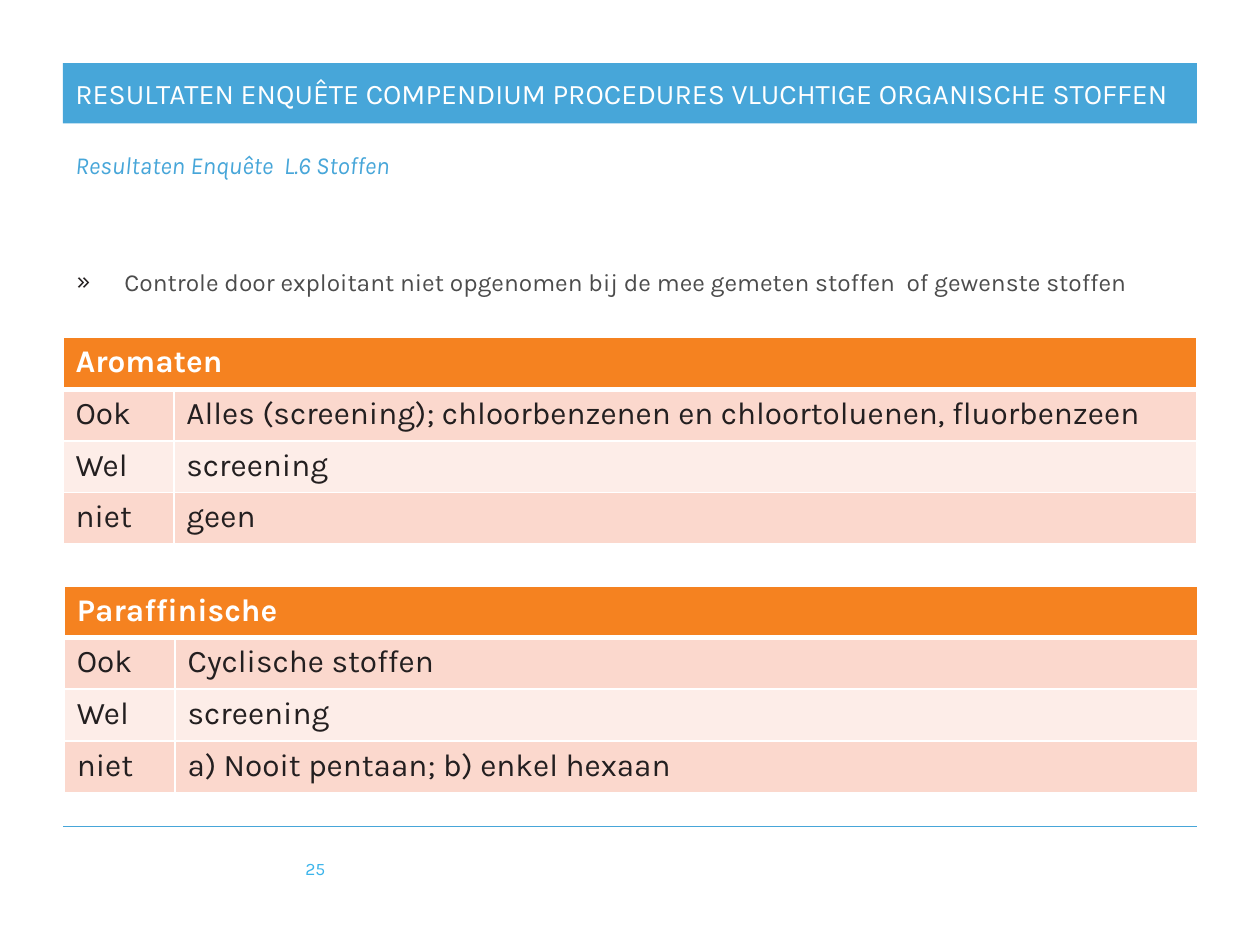
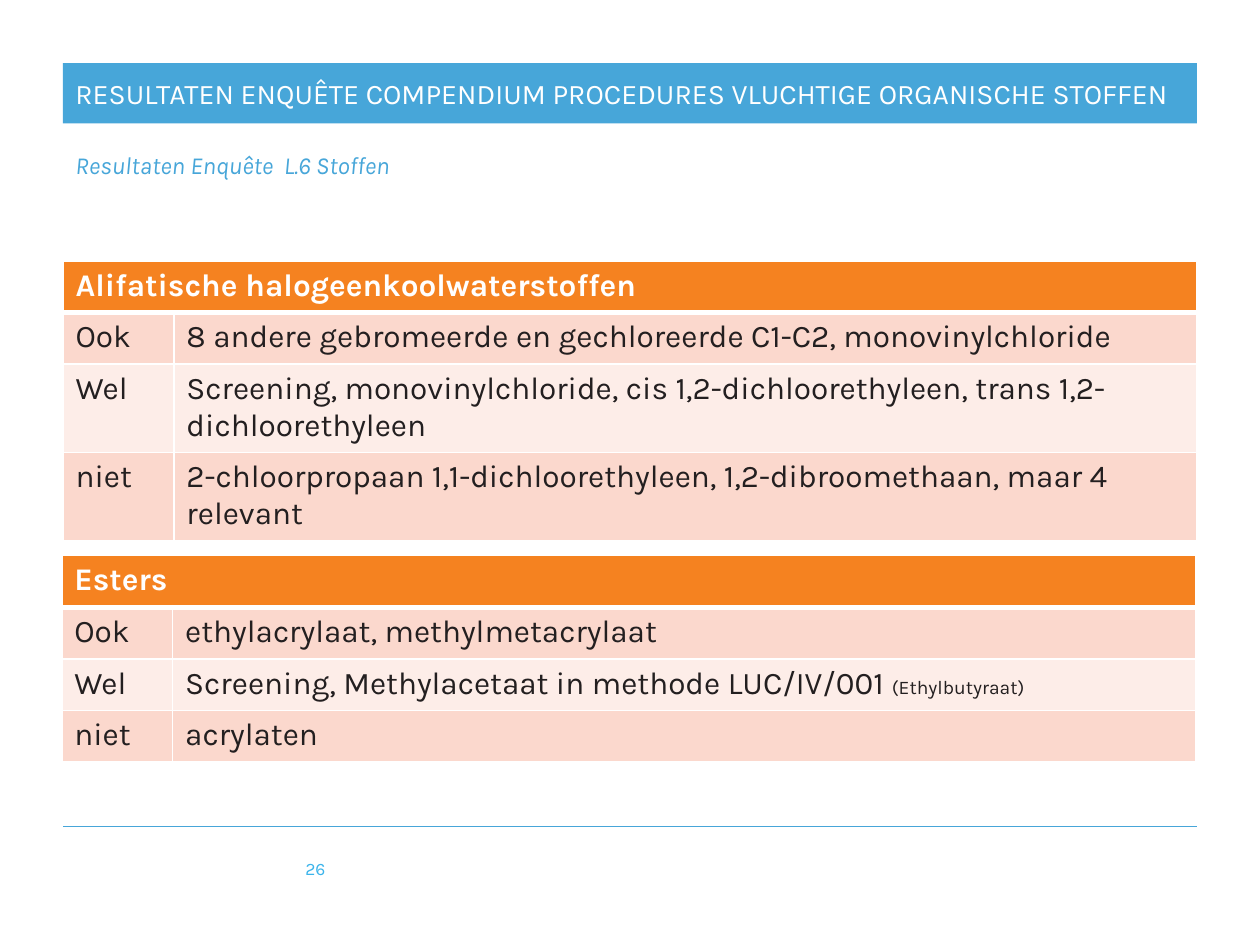
from dataclasses import dataclass

from lxml import etree
from pptx import Presentation
from pptx import util as u
from pptx.dml import color
from pptx.enum import shapes, text
from pptx.oxml import ns


@dataclass(frozen=True)
class Theme:
    font: str = "Karla"
    blue: str = "47A6D9"
    number_blue: str = "3BB4EB"
    orange: str = "F58220"
    band_dark: str = "FBD8CD"
    band_light: str = "FDEDE8"
    ink: str = "231F20"
    grey: str = "4C4C4C"
    white: str = "FFFFFF"
    title_size: float = 16.2
    table_size: float = 18
    body_size: float = 14
    note_size: float = 11
    number_size: float = 10


@dataclass(frozen=True)
class Row:
    label: str
    value: str
    note: str = ""
    lines: int = 1


@dataclass(frozen=True)
class SubstanceTable:
    heading: str
    left: float
    top: float
    rows: tuple[Row, ...]


@dataclass(frozen=True)
class Page:
    number: int
    tables: tuple[SubstanceTable, ...]
    bullet: str = ""


THEME = Theme()
TITLE = "RESULTATEN ENQUÊTE COMPENDIUM PROCEDURES VLUCHTIGE ORGANISCHE STOFFEN"
SUBTITLE = "Resultaten Enquête  L.6 Stoffen"
LEFT, WIDTH = 0.5, 9
LABEL_WIDTH = 0.88
ROW_HEIGHT, EXTRA_LINE = 0.41, 0.28

PAGES = (
    Page(
        25,
        (
            SubstanceTable("Aromaten", 0.5, 2.68, (
                Row("Ook", "Alles (screening); chloorbenzenen en chloortoluenen, fluorbenzeen"),
                Row("Wel", "screening"),
                Row("niet", "geen"),
            )),
            SubstanceTable("Paraffinische", 0.51, 4.65, (
                Row("Ook", "Cyclische stoffen"),
                Row("Wel", "screening"),
                Row("niet", "a) Nooit pentaan; b) enkel hexaan"),
            )),
        ),
        "Controle door exploitant niet opgenomen bij de mee gemeten stoffen  of gewenste stoffen",
    ),
    Page(
        26,
        (
            SubstanceTable("Alifatische halogeenkoolwaterstoffen", 0.5, 2.07, (
                Row("Ook", "8 andere gebromeerde en gechloreerde C1-C2, monovinylchloride"),
                Row("Wel", "Screening, monovinylchloride, cis 1,2-dichloorethyleen, "
                    "trans 1,2-dichloorethyleen", lines=2),
                Row("niet", "2-chloorpropaan 1,1-dichloorethyleen, 1,2-dibroomethaan, "
                    "maar 4 relevant", lines=2),
            )),
            SubstanceTable("Esters", 0.49, 4.41, (
                Row("Ook", "ethylacrylaat, methylmetacrylaat"),
                Row("Wel", "Screening, Methylacetaat in methode LUC/IV/001 ", "(Ethylbutyraat)"),
                Row("niet", "acrylaten"),
            )),
        ),
    ),
)


def rgb(value: str) -> color.RGBColor:
    return color.RGBColor.from_string(value)


def add_span(para, words: str, *, size: float, ink: str,
             bold: bool = False, italic: bool = False) -> None:
    span = para.add_run()
    span.text = words
    font = span.font
    font.name = THEME.font
    font.size = u.Pt(size)
    font.bold = bold
    font.italic = italic
    font.color.rgb = rgb(ink)


def add_text(slide, words: str, left: float, top: float, width: float, height: float, *,
             align=text.PP_ALIGN.LEFT, anchor=text.MSO_ANCHOR.TOP, **style):
    box = slide.shapes.add_textbox(u.Inches(left), u.Inches(top), u.Inches(width), u.Inches(height))
    frame = box.text_frame
    frame.word_wrap = True
    frame.vertical_anchor = anchor
    para = frame.paragraphs[0]
    para.alignment = align
    add_span(para, words, **style)
    return para


def add_child(parent, tag: str, **attributes: str):
    return etree.SubElement(parent, ns.qn(tag), attributes)


def add_bullet(para) -> None:
    properties = para._p.get_or_add_pPr()
    indent = u.Inches(0.38)
    properties.set("marL", str(indent))
    properties.set("indent", str(-indent))
    add_child(add_child(properties, "a:buClr"), "a:srgbClr", val=THEME.ink)
    add_child(properties, "a:buFont", typeface=THEME.font)
    add_child(properties, "a:buChar", char="»")


def style_cell(cell, fill: str, top: float = 1, bottom: float = 1) -> None:
    properties = cell._tc.get_or_add_tcPr()
    for tag, points in (("a:lnL", 1), ("a:lnR", 1), ("a:lnT", top), ("a:lnB", bottom)):
        border = add_child(properties, tag, w=str(u.Pt(points)))
        add_child(add_child(border, "a:solidFill"), "a:srgbClr", val=THEME.white)
    cell.fill.solid()
    cell.fill.fore_color.rgb = rgb(fill)


def add_substance_table(slide, substances: SubstanceTable) -> None:
    heights = [ROW_HEIGHT] + [ROW_HEIGHT + EXTRA_LINE * (row.lines - 1) for row in substances.rows]
    table = slide.shapes.add_table(
        len(heights), 2, u.Inches(substances.left), u.Inches(substances.top),
        u.Inches(WIDTH), u.Inches(sum(heights))).table
    for column, width in zip(table.columns, (LABEL_WIDTH, WIDTH - LABEL_WIDTH)):
        column.width = u.Inches(width)
    for line, height in zip(table.rows, heights):
        line.height = u.Inches(height)

    heading = table.cell(0, 0)
    heading.merge(table.cell(0, 1))
    for column in range(2):
        style_cell(table.cell(0, column), THEME.orange, bottom=3)
    add_span(heading.text_frame.paragraphs[0], substances.heading,
             size=THEME.table_size, ink=THEME.white, bold=True)

    for index, row in enumerate(substances.rows, start=1):
        fill = THEME.band_dark if index % 2 else THEME.band_light
        for column, words in enumerate((row.label, row.value)):
            cell = table.cell(index, column)
            style_cell(cell, fill, top=3 if index == 1 else 1)
            add_span(cell.text_frame.paragraphs[0], words, size=THEME.table_size, ink=THEME.ink)
        if row.note:
            add_span(table.cell(index, 1).text_frame.paragraphs[0], row.note,
                     size=THEME.note_size, ink=THEME.ink)


def add_frame(slide, number: int) -> None:
    rule = slide.shapes.add_connector(
        shapes.MSO_CONNECTOR.STRAIGHT, u.Inches(LEFT), u.Inches(6.56),
        u.Inches(LEFT + WIDTH), u.Inches(6.56))
    rule.line.color.rgb = rgb(THEME.blue)
    rule.line.width = u.Pt(0.5)
    add_child(rule._element.spPr, "a:effectLst")

    band = slide.shapes.add_shape(
        shapes.MSO_SHAPE.RECTANGLE, u.Inches(LEFT), u.Inches(0.5), u.Inches(WIDTH), u.Inches(0.48))
    band.shadow.inherit = False
    band.fill.solid()
    band.fill.fore_color.rgb = rgb(THEME.blue)
    band.line.fill.background()
    band.text_frame.word_wrap = True
    band.text_frame.vertical_anchor = text.MSO_ANCHOR.MIDDLE
    para = band.text_frame.paragraphs[0]
    para.alignment = text.PP_ALIGN.LEFT
    add_span(para, TITLE, size=THEME.title_size, ink=THEME.white)

    add_text(slide, SUBTITLE, LEFT, 1.14, WIDTH, 0.78,
             size=THEME.body_size, ink=THEME.blue, italic=True)
    add_text(slide, str(number), 1.99, 6.69, 0.69, 0.4, align=text.PP_ALIGN.RIGHT,
             anchor=text.MSO_ANCHOR.MIDDLE, size=THEME.number_size, ink=THEME.number_blue)


def add_page(deck, page: Page) -> None:
    slide = deck.slides.add_slide(deck.slide_layouts[6])
    add_frame(slide, page.number)
    for substances in page.tables:
        add_substance_table(slide, substances)
    if page.bullet:
        add_bullet(add_text(slide, page.bullet, 0.51, 2.07, WIDTH, 4.41,
                            size=THEME.body_size, ink=THEME.grey))


def main() -> None:
    deck = Presentation()
    deck.slide_width = u.Inches(10)
    deck.slide_height = u.Inches(7.5)
    for page in PAGES:
        add_page(deck, page)
    deck.save("out.pptx")


if __name__ == "__main__":
    main()
